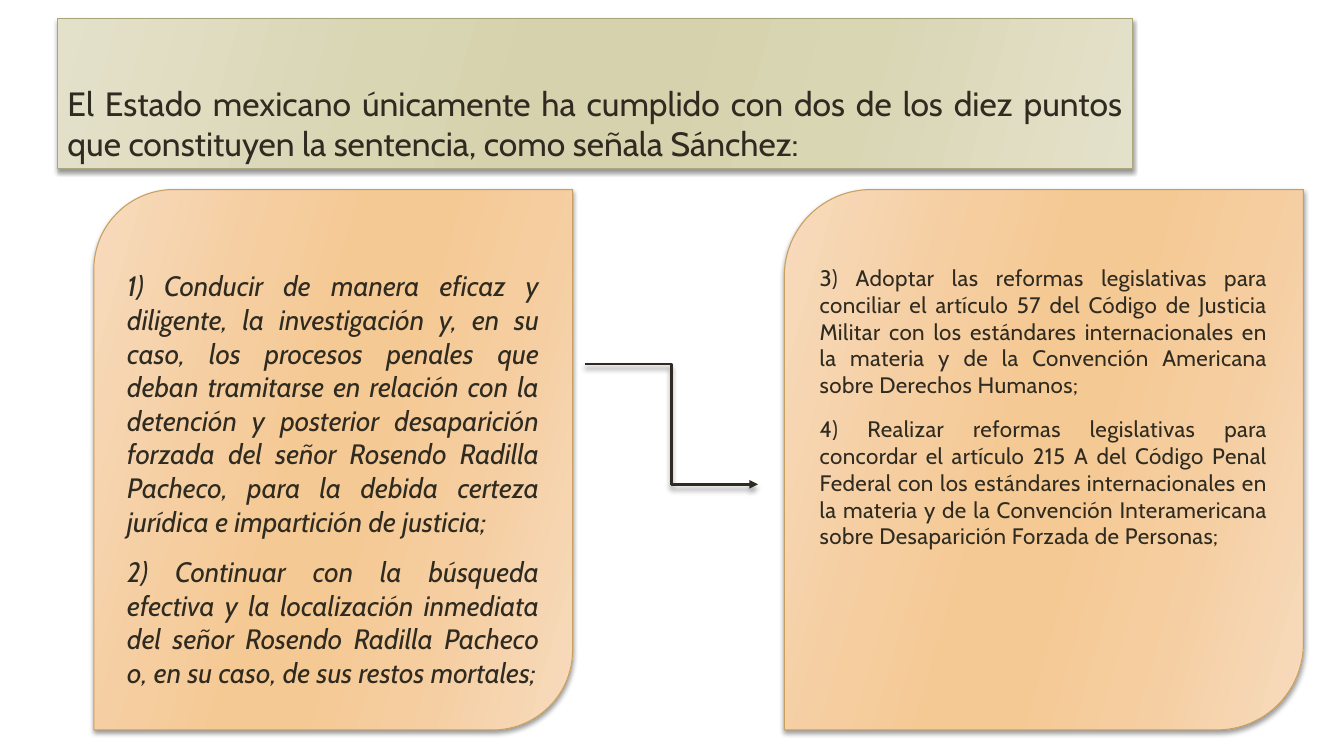
from lxml.etree import SubElement
from pptx import Presentation
from pptx.dml.color import RGBColor as RGB
from pptx.enum.shapes import MSO_CONNECTOR as Connector
from pptx.enum.text import MSO_ANCHOR as Anchor, MSO_AUTO_SIZE as AutoSize, PP_ALIGN as Align
from pptx.oxml.ns import qn
from pptx.util import Pt

COLORS = {
    "ink": "2F2B20",
    "shadow": "000000",
    "olive_edge": "A9A57C",
    "orange_edge": "C89F5D",
}
# Outer, middle and centre tones of each symmetric gradient
TONES = {
    "olive": ("E4E1CB", "D9D6B4", "D6D2AD"),
    "orange": ("F7DBBD", "F5CD9F", "F5C994"),
}

HEADING = ("El Estado mexicano únicamente ha cumplido con dos de los diez puntos "
           "que constituyen la sentencia, como señala Sánchez:")
INVESTIGATION = [
    "1) Conducir de manera eficaz y diligente, la investigación y, en su caso, los procesos "
    "penales que deban tramitarse en relación con la detención y posterior desaparición forzada "
    "del señor Rosendo Radilla Pacheco, para la debida certeza jurídica e impartición de justicia;",
    "2) Continuar con la búsqueda efectiva y la localización inmediata del señor Rosendo Radilla "
    "Pacheco o, en su caso, de sus restos mortales;",
]
REFORMS = [
    "3) Adoptar las reformas legislativas para conciliar el artículo 57 del Código de Justicia "
    "Militar con los estándares internacionales en la materia y de la Convención Americana sobre "
    "Derechos Humanos;",
    "4) Realizar reformas legislativas para concordar el artículo 215 A del Código Penal Federal "
    "con los estándares internacionales en la materia y de la Convención Interamericana sobre "
    "Desaparición Forzada de Personas;",
]


def add_node(parent, tag, **attributes):
    return SubElement(parent, qn(tag), {key: str(value) for key, value in attributes.items()})


class SentenceSlide:
    font = "Cabin"

    def __init__(self, slide):
        self.slide = slide

    def shadow(self, shape, blur, distance):
        effects = add_node(shape.element.spPr, "a:effectLst")
        outer = add_node(effects, "a:outerShdw", blurRad=Pt(blur), dist=Pt(distance),
                         dir=90 * 60000, rotWithShape=0)
        color = add_node(outer, "a:srgbClr", val=COLORS["shadow"])
        add_node(color, "a:alpha", val=40000)

    def panel(self, shape, box, geometry, tone):
        shape.left, shape.top, shape.width, shape.height = map(Pt, box)
        properties = shape.element.spPr
        add_node(add_node(properties, "a:prstGeom", prst=geometry), "a:avLst")
        gradient = add_node(properties, "a:gradFill", rotWithShape=1)
        stops = add_node(gradient, "a:gsLst")
        tones = TONES[tone]
        for position, color in zip((0, 30, 45, 55, 73, 100), tones + tones[::-1]):
            stop = add_node(stops, "a:gs", pos=position * 1000)
            add_node(stop, "a:srgbClr", val=color)
        add_node(gradient, "a:lin", ang=16 * 60000, scaled=1)
        shape.line.color.rgb = RGB.from_string(COLORS[tone + "_edge"])
        shape.line.width = Pt(0.75)
        self.shadow(shape, 3, 2)

    def set_text(self, paragraph, text, size, italic=False):
        paragraph.text = text
        paragraph.alignment = Align.JUSTIFY
        paragraph.line_spacing = 1.0
        font = paragraph.font
        font.name, font.size, font.italic = self.font, Pt(size), italic
        font.color.rgb = RGB.from_string(COLORS["ink"])

    def heading(self, text, box):
        title = self.slide.shapes.title
        self.panel(title, box, "rect", "olive")
        frame = title.text_frame
        frame.auto_size = AutoSize.NONE
        frame.vertical_anchor = Anchor.BOTTOM
        self.set_text(frame.paragraphs[0], text, 24)

    def points(self, index, texts, box, size, top_margin, italic=False, tracking=0):
        body = self.slide.placeholders[index]
        self.panel(body, box, "round2DiagRect", "orange")
        frame = body.text_frame
        frame.auto_size = AutoSize.NONE
        frame.vertical_anchor = Anchor.TOP
        frame.margin_top = Pt(top_margin)
        for number, text in enumerate(texts):
            paragraph = frame.add_paragraph() if number else frame.paragraphs[0]
            self.set_text(paragraph, text, size, italic)
            paragraph.space_before = Pt(12 if number else 0)
            # No bullet, no hanging indent, optional letter spacing
            layout = paragraph._p.get_or_add_pPr()
            layout.set("marL", "0")
            layout.set("indent", "0")
            letters = layout.find(qn("a:defRPr"))
            letters.addprevious(add_node(layout, "a:buNone"))
            letters.set("spc", str(round(tracking * 100)))

    def arrow(self, start, end):
        elbow = self.slide.shapes.add_connector(Connector.ELBOW, *map(Pt, start + end))
        elbow.line.color.rgb = RGB.from_string(COLORS["ink"])
        elbow.line.width = Pt(2)
        add_node(elbow.element.spPr.find(qn("a:ln")), "a:tailEnd", type="triangle")
        self.shadow(elbow, 4, 3.4)


def main():
    deck = Presentation()
    deck.slide_width, deck.slide_height = Pt(960), Pt(540)
    two_content = deck.slide_layouts[3]
    page = SentenceSlide(deck.slides.add_slide(two_content))

    # Heading band
    page.heading(HEADING, (41, 13, 768, 107.5))

    # Fulfilled points
    top, height = 135.4, 386
    page.points(1, INVESTIGATION, (67, top, 342, height), 20, 40, italic=True)
    page.points(2, REFORMS, (560.2, top, 370.8, height), 16, 35, tracking=0.3)

    # Arrow from the first pair to the second
    page.arrow((417.6, 260), (541.4, 346))

    deck.save("out.pptx")


if __name__ == "__main__":
    main()
